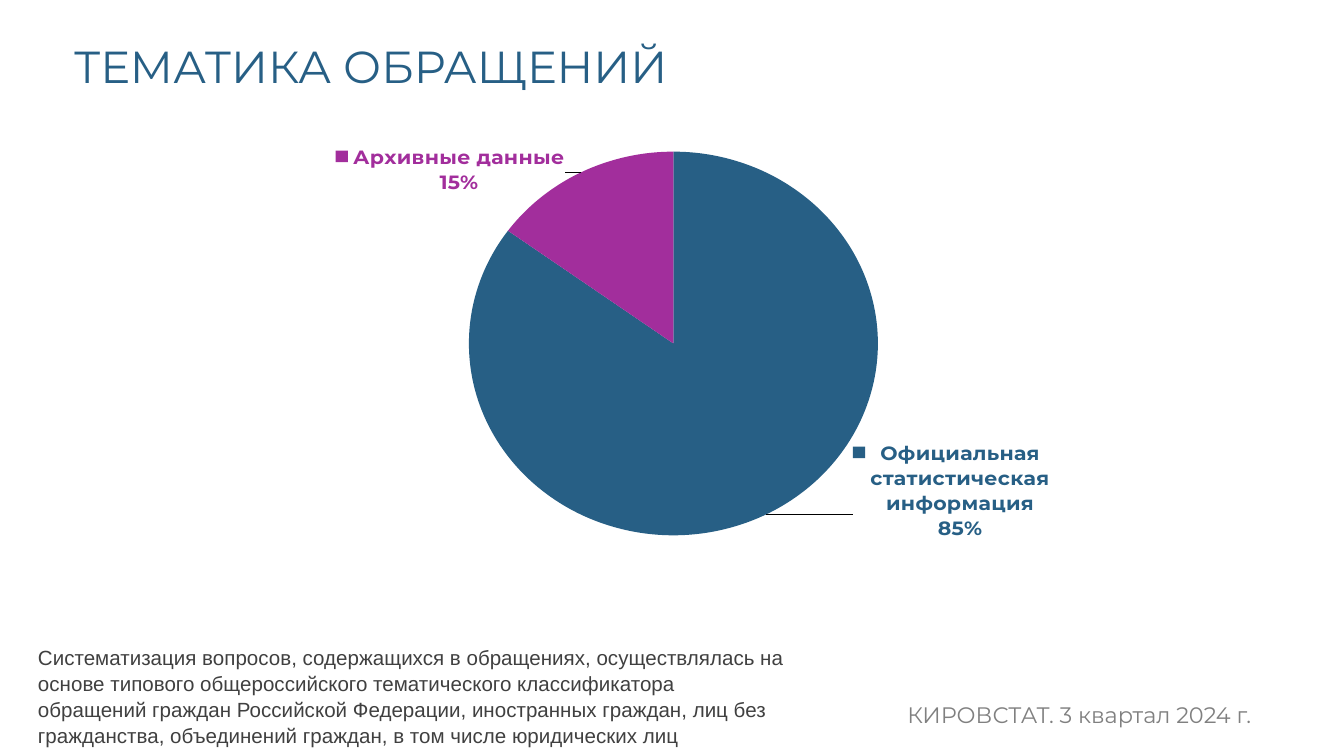
from dataclasses import dataclass

from lxml import etree
from pptx import Presentation
from pptx.chart.data import CategoryChartData
from pptx.dml.color import RGBColor
from pptx.enum.chart import XL_CHART_TYPE, XL_LABEL_POSITION
from pptx.oxml.ns import qn
from pptx.util import Emu, Pt

PIE = XL_CHART_TYPE.PIE
OUTSIDE_END = XL_LABEL_POSITION.OUTSIDE_END
EMU_PER_PX = 914400 / 134.4


@dataclass(frozen=True)
class Theme:
    blue: str = "275F85"
    purple: str = "A22E9C"
    dark: str = "404040"
    gray: str = "808080"
    black: str = "000000"
    heading_font: str = "Montserrat"
    body_font: str = "Arial"
    chart_font: str = "Calibri"
    heading_size: int = 24
    chart_size: int = 18
    footer_size: int = 12
    small_size: int = 11


def px(value):
    return Emu(round(value * EMU_PER_PX))


def set_font(font, name, size, color, bold=False):
    for attribute, value in {"name": name, "size": Pt(size), "bold": bold}.items():
        setattr(font, attribute, value)
    font.color.rgb = RGBColor.from_string(color)


def manual_layout(**values):
    """Build a chart layout from fractions of the chart area."""
    layout = etree.Element(qn("c:layout"))
    manual = etree.SubElement(layout, qn("c:manualLayout"))
    for tag, value in values.items():
        etree.SubElement(manual, qn(f"c:{tag}")).set("val", str(value))
    return layout


class SlideBuilder:
    def __init__(self, slide, theme):
        self.slide = slide
        self.theme = theme

    def text(self, box, content, font, size, color, inset=None, wrap=True, spacing=1.0):
        shape = self.slide.shapes.add_textbox(*map(px, box))
        frame = shape.text_frame
        frame.word_wrap = wrap
        if inset is not None:
            for side in ("left", "top", "right", "bottom"):
                setattr(frame, f"margin_{side}", px(inset))
        paragraph = frame.paragraphs[0]
        paragraph.line_spacing = spacing
        run = paragraph.add_run()
        run.text = content
        set_font(run.font, font, size, color)

    def pie(self, box, slices, plot_layout):
        """Each slice is (category, value, color, label offset)."""
        theme = self.theme
        data = CategoryChartData()
        data.categories = [category for category, *_ in slices]
        data.add_series("Series 1", [value for _, value, *_ in slices])
        chart = self.slide.shapes.add_chart(PIE, *map(px, box), data).chart
        chart.has_title = False
        chart.has_legend = False
        set_font(chart.font, theme.chart_font, theme.chart_size, theme.black)
        plot = chart.plots[0]
        plot.vary_by_categories = True

        # Slice colors and label fonts
        for index, (_, _, color, _) in enumerate(slices):
            point = plot.series[0].points[index]
            point.format.fill.solid()
            point.format.fill.fore_color.rgb = RGBColor.from_string(color)
            label = point.data_label
            set_font(label.font, theme.heading_font, theme.small_size, color, True)
            label.position = OUTSIDE_END

        # Label contents and offsets
        shown = {"showLegendKey": 1, "showVal": 0, "showCatName": 1,
                 "showSerName": 0, "showPercent": 1}
        chart_xml = plot.series[0].points[0].data_label.font and chart.element
        for label_xml, (*_, offset) in zip(chart_xml.iter(qn("c:dLbl")), slices):
            for tag, value in shown.items():
                label_xml.find(qn(f"c:{tag}")).set("val", str(value))
            etree.SubElement(label_xml, qn("c:separator")).text = "\n"
            label_xml.insert(1, manual_layout(x=offset[0], y=offset[1]))

        # Plot area
        plot_area = next(chart_xml.iter(qn("c:plotArea")))
        for old_layout in plot_area.findall(qn("c:layout")):
            plot_area.remove(old_layout)
        plot_area.insert(0, manual_layout(layoutTarget="inner", xMode="edge",
                                          yMode="edge", **plot_layout))


def main():
    theme = Theme()
    presentation = Presentation()
    presentation.slide_width = px(1344)
    presentation.slide_height = px(756)
    slide = presentation.slides.add_slide(presentation.slide_layouts[6])
    builder = SlideBuilder(slide, theme)

    # Classifier note
    builder.text(
        (38, 644, 751, 105),
        "Систематизация вопросов, содержащихся в обращениях, осуществлялась на "
        "основе типового общероссийского тематического классификатора обращений "
        "граждан Российской Федерации, иностранных граждан, лиц без гражданства, "
        "объединений граждан, в том числе юридических лиц",
        theme.body_font, theme.small_size, theme.dark, inset=0, spacing=1.05)

    # Heading
    builder.text((74, 39, 1000, 103), "ТЕМАТИКА ОБРАЩЕНИЙ", theme.heading_font,
                 theme.heading_size, theme.blue, inset=0)

    # Topics chart
    builder.pie(
        (74, 116, 1187, 505),
        [("Официальная статистическая информация", 85, theme.blue, (0.07, -0.17)),
         ("Архивные данные", 15, theme.purple, (-0.01, 0.06))],
        {"x": 0.33, "y": 0.05, "w": 0.35, "h": 0.81})

    # Footer
    builder.text((894, 695, 417, 40), "КИРОВСТАТ. 3 квартал 2024 г.",
                 theme.heading_font, theme.footer_size, theme.gray, wrap=False)

    presentation.save("out.pptx")


if __name__ == "__main__":
    main()
